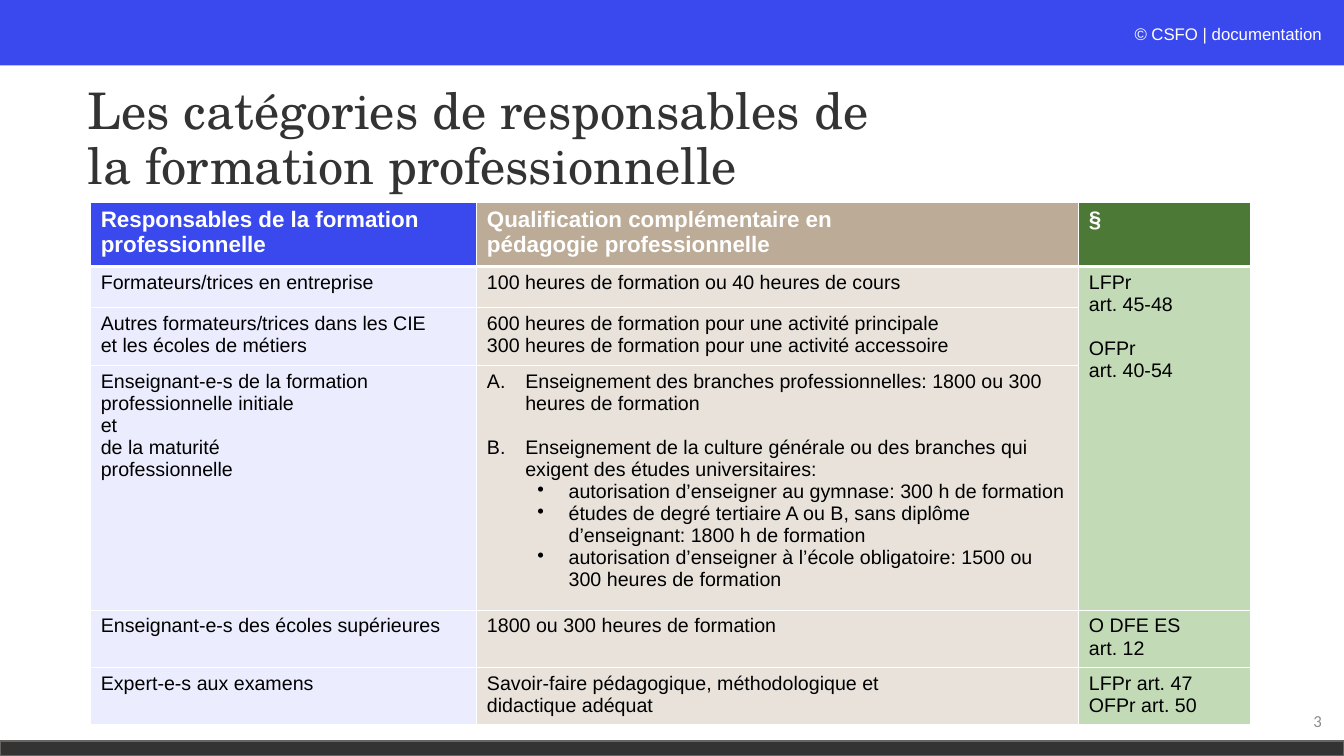
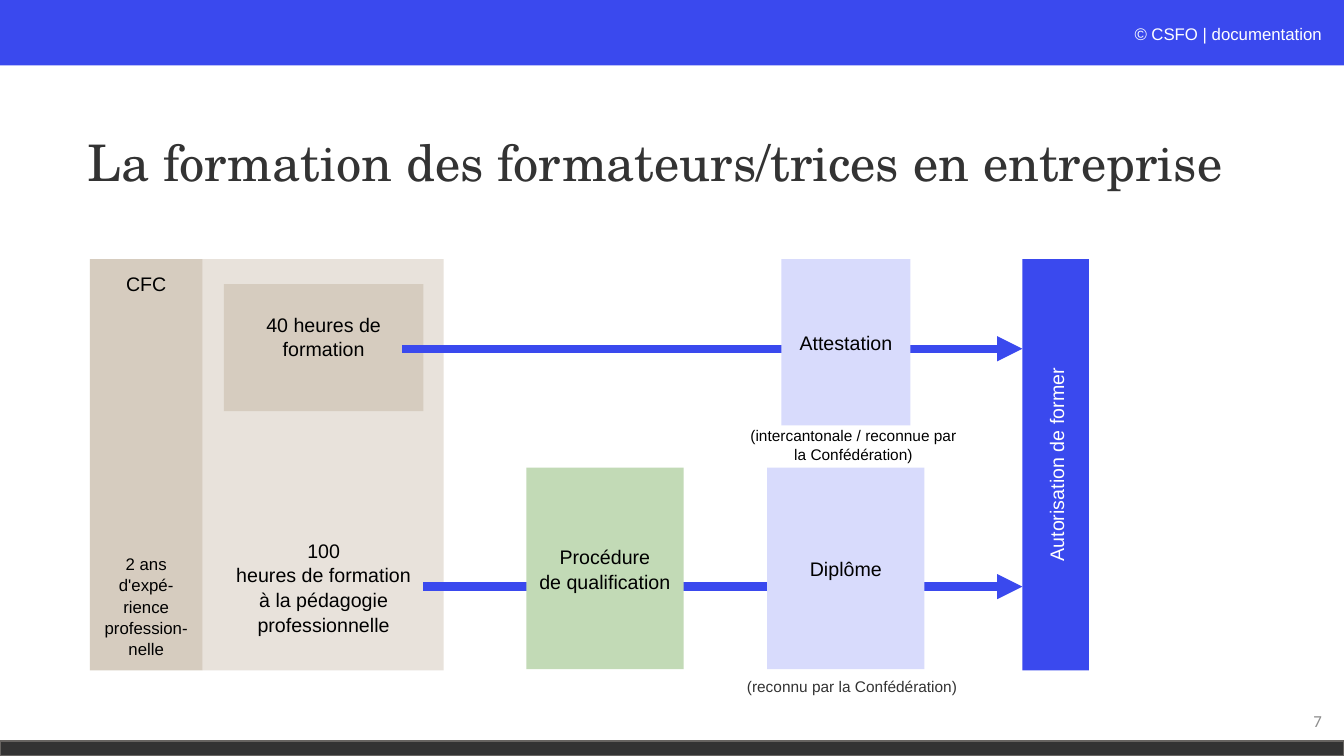
from lxml.etree import SubElement
from pptx import Presentation
from pptx.dml.color import RGBColor
from pptx.enum.shapes import MSO_CONNECTOR, MSO_SHAPE
from pptx.enum.text import MSO_ANCHOR, MSO_AUTO_SIZE, PP_ALIGN
from pptx.oxml import parse_xml
from pptx.oxml.ns import nsdecls, qn
from pptx.util import Inches, Pt

COLORS = {
    "blue": "3A49EE", "pale_blue": "EBECFE", "light_blue": "D8DBFC",
    "sand": "BCAB96", "light_sand": "D6CCBF", "pale_sand": "E8E2DB",
    "green": "4C7936", "light_green": "C2DAB6",
    "white": "FFFFFF", "off_white": "FCFDFE", "black": "000000",
    "dark": "333333", "edge": "666360", "grey": "8C8C8C",
}
RGB = {name: RGBColor.from_string(value) for name, value in COLORS.items()}


def write(frame, text, size=14, color="black", font="Arial", bold=False, italic=False,
          align=PP_ALIGN.LEFT, spacing=None, before=0, join=False, marker=None, indent=(0, 0)):
    for index, line in enumerate(text.split("\n")):
        paragraph = frame.paragraphs[-1]
        if paragraph.runs and not join:
            paragraph = frame.add_paragraph()
        paragraph.alignment = align
        if spacing:
            paragraph.line_spacing = spacing
        if before and index == 0:
            paragraph.space_before = Pt(before)
        if marker:
            properties = paragraph._p.get_or_add_pPr()
            properties.set("marL", str(Inches(indent[0])))
            properties.set("indent", str(Inches(indent[1])))
            tag, attribute, value = marker
            SubElement(properties, qn(tag)).set(attribute, value)
        for position, piece in enumerate(line.split("\v")):
            if position:
                paragraph.add_line_break()
            run = paragraph.add_run()
            run.text = piece
            run.font.name = font
            run.font.size = Pt(size)
            run.font.bold = bold
            run.font.italic = italic
            run.font.color.rgb = RGB[color]


def add_box(slide, place, fill=None, wrap=True):
    lengths = [Inches(length) for length in place]
    if fill:
        shape = slide.shapes.add_shape(MSO_SHAPE.RECTANGLE, *lengths)
        shape.shadow.inherit = False
        shape.fill.solid()
        shape.fill.fore_color.rgb = RGB[fill]
        shape.line.fill.background()
        shape.text_frame.vertical_anchor = MSO_ANCHOR.MIDDLE
    else:
        shape = slide.shapes.add_textbox(*lengths)
    shape.text_frame.word_wrap = wrap
    return shape


presentation = Presentation()
presentation.slide_width = Inches(13.33)
presentation.slide_height = Inches(7.5)
layout = presentation.slide_layouts[5]

pages = [
    ("Les catégories de responsables de\vla formation professionnelle", "3", 0.67, 11.63),
    ("La formation des formateurs/trices en entreprise", "7", 0.91, 11.5),
]
slides = []
for title_text, number, title_top, title_width in pages:
    slide = presentation.slides.add_slide(layout)
    title = slide.shapes.title
    title.left, title.top = Inches(0.77), Inches(title_top)
    title.width, title.height = Inches(title_width), Inches(1.45)
    title.text_frame.auto_size = MSO_AUTO_SIZE.NONE
    title.text_frame.vertical_anchor = MSO_ANCHOR.MIDDLE
    write(title.text_frame, title_text, size=36, color="dark", font="TeX Gyre Schola", spacing=0.9)
    number_box = add_box(slide, (10.21, 6.95, 3, 0.4))
    number_box.text_frame.vertical_anchor = MSO_ANCHOR.MIDDLE
    write(number_box.text_frame, number, size=12, color="grey", font="Calibri", align=PP_ALIGN.RIGHT)
    slides.append(slide)
categories, training = slides

top_band = add_box(categories, (0, 0, 13.33, 0.65), "blue")
bottom_band = add_box(categories, (0, 7.35, 13.33, 0.15), "dark")
bottom_band.line.color.rgb = RGB["edge"]
bottom_band.line.width = Pt(1)
credit = add_box(categories, (8.62, 0.19, 4.59, 0.3))
write(credit.text_frame, "© ", size=12, color="off_white", italic=True, align=PP_ALIGN.RIGHT)
write(credit.text_frame, "CSFO | documentation", size=12, color="white", align=PP_ALIGN.RIGHT, join=True)
for shape_id, shape in enumerate((top_band, bottom_band, credit), 20):
    shape.element.nvSpPr.cNvPr.set("id", str(shape_id))
    layout.shapes.element.append(shape.element)

rows = [
    ("Responsables de la formation\nprofessionnelle",
     "Qualification complémentaire en\npédagogie professionnelle", "§"),
    ("Formateurs/trices en entreprise", "100 heures de formation ou 40 heures de cours",
     "LFPr\nart. 45-48"),
    ("Autres formateurs/trices dans les CIE\net les écoles de métiers",
     "600 heures de formation pour une activité principale\n"
     "300 heures de formation pour une activité accessoire", ""),
    ("Enseignant-e-s de la formation professionnelle initiale\net\nde la maturité\nprofessionnelle",
     "", ""),
    ("Enseignant-e-s des écoles supérieures", "1800 ou 300 heures de formation", "O DFE ES\nart. 12"),
    ("Expert-e-s aux examens", "Savoir-faire pédagogique, méthodologique et\ndidactique adéquat",
     "LFPr art. 47\nOFPr art. 50"),
]
widths = [3.83, 5.97, 1.7]
heights = [0.62, 0.41, 0.57, 2.43, 0.57, 0.57]
header_fills = ["blue", "sand", "green"]
body_fills = ["pale_blue", "pale_sand", "light_green"]
table = categories.shapes.add_table(
    len(rows), len(widths), Inches(0.9), Inches(2.01), Inches(sum(widths)), Inches(sum(heights))).table
table.first_row = table.horz_banding = False
for column, width in zip(table.columns, widths):
    column.width = Inches(width)
for row, height in zip(table.rows, heights):
    row.height = Inches(height)

for row_index, texts in enumerate(rows):
    header = row_index == 0
    for column_index, text in enumerate(texts):
        cell = table.cell(row_index, column_index)
        cell_properties = cell._tc.get_or_add_tcPr()
        for position, side in enumerate("LRTB"):
            heavy = (row_index, side) in ((0, "B"), (1, "T"))
            cell_properties.insert(position, parse_xml(
                f'<a:ln{side} {nsdecls("a")} w="{Pt(3 if heavy else 1)}"><a:solidFill>'
                f'<a:srgbClr val="{COLORS["white"]}"/></a:solidFill></a:ln{side}>'))
        cell.fill.solid()
        cell.fill.fore_color.rgb = RGB[(header_fills if header else body_fills)[column_index]]
        if text:
            write(cell.text_frame, text, size=16 if header else 14,
                  color="white" if header else "black", bold=header)

table.cell(1, 2).merge(table.cell(3, 2))
write(table.cell(1, 2).text_frame, "OFPr\nart. 40-54", before=16)
teaching = table.cell(3, 1).text_frame
lettered = {"marker": ("a:buAutoNum", "type", "alphaUcPeriod"), "indent": (0.38, -0.38)}
write(teaching, "Enseignement des branches professionnelles: 1800 ou 300 heures de formation", **lettered)
write(teaching, "Enseignement de la culture générale ou des branches qui exigent des études universitaires:",
      before=16, **lettered)
write(teaching,
      "autorisation d’enseigner au gymnase: 300 h de formation\n"
      "études de degré tertiaire A ou B, sans diplôme d’enseignant: 1800 h de formation\n"
      "autorisation d’enseigner à l’école obligatoire: 1500 ou 300 heures de formation",
      marker=("a:buChar", "char", "•"), indent=(0.81, -0.31))

centred = {"align": PP_ALIGN.CENTER, "spacing": 1.05}
add_box(training, (2.01, 2.57, 2.39, 4.08), "pale_sand")
forty_hours = add_box(training, (2.22, 2.82, 1.98, 1.26), "light_sand")
forty_hours.text_frame.margin_bottom = Inches(0.28)
write(forty_hours.text_frame, "40 heures de\nformation", **centred)
hundred_hours = add_box(training, (2.22, 5.19, 1.98, 1.26), "pale_sand")
write(hundred_hours.text_frame, "100\nheures de formation\nà la pédagogie\nprofessionnelle", **centred)

for start, height in ((3.99, 3.46), (4.2, 5.82)):
    arrow = training.shapes.add_connector(
        MSO_CONNECTOR.STRAIGHT, Inches(start), Inches(height), Inches(10.14), Inches(height))
    arrow.line.color.rgb = RGB["blue"]
    arrow.line.width = Pt(6)
    SubElement(arrow.line._get_or_add_ln(), qn("a:tailEnd")).set("type", "triangle")
    SubElement(arrow.element.spPr, qn("a:effectLst"))
arrow.begin_connect(hundred_hours, 3)

certificate = add_box(training, (0.89, 2.57, 1.12, 4.08), "light_sand")
write(certificate.text_frame, "CFC", **centred)
write(certificate.text_frame, "2 ans\nd'expé-rience profession-nelle", size=12, before=184, **centred)

steps = [
    ("Procédure\nde qualification", (5.22, 4.64, 1.56, 2), "light_green", "black"),
    ("Diplôme", (7.61, 4.64, 1.56, 2), "light_blue", "black"),
    ("Attestation", (7.75, 2.57, 1.28, 1.65), "light_blue", "black"),
    ("Autorisation de former", (10.14, 2.57, 0.66, 4.08), "blue", "white"),
]
for text, place, fill, color in steps:
    step = add_box(training, place, fill)
    write(step.text_frame, text, color=color, **centred)
step.element.txBody.bodyPr.set("vert", "vert270")

attestation_note = add_box(training, (7.27, 4.18, 2.39, 0.47))
write(attestation_note.text_frame, "(intercantonale / reconnue par la Confédération)",
      size=11, align=PP_ALIGN.CENTER)
diploma_note = add_box(training, (7.31, 6.67, 2.3, 0.29), wrap=False)
write(diploma_note.text_frame, "(reconnu par la Confédération)", size=11, color="dark")

presentation.save("out.pptx")
